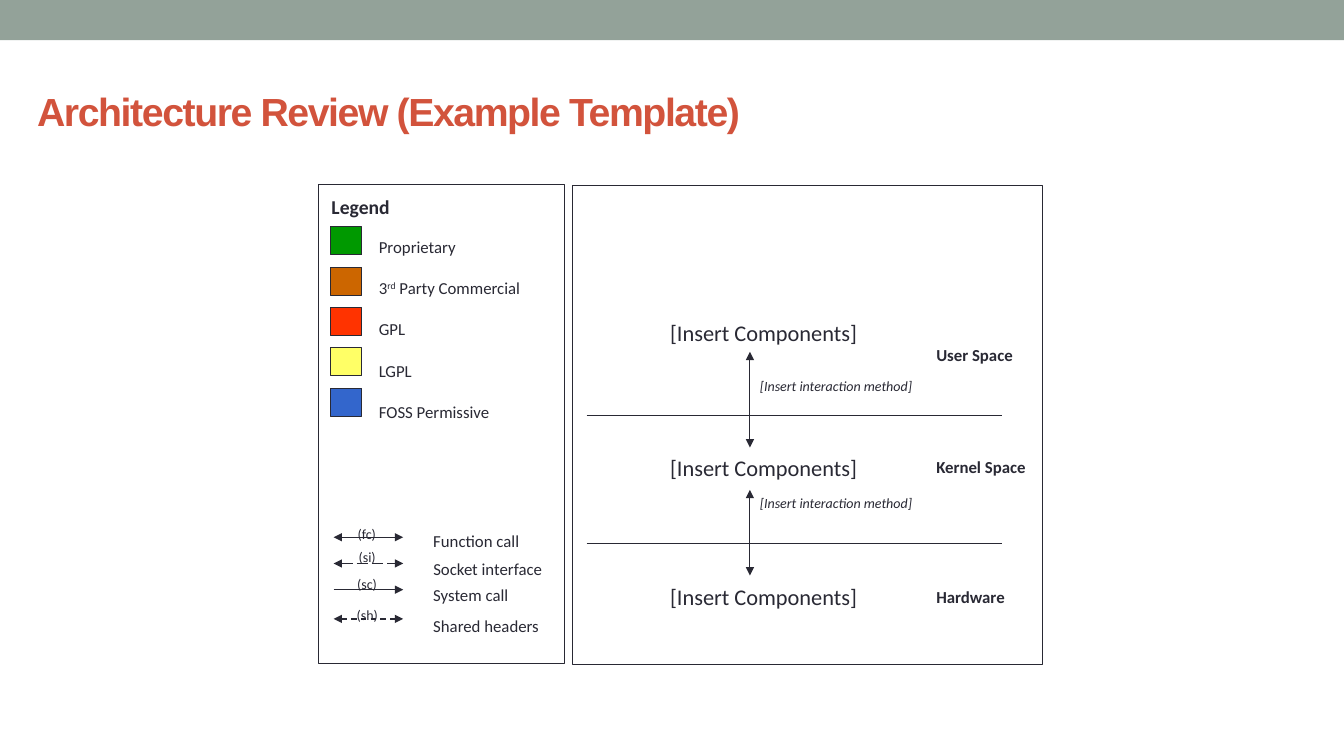
import collections

import pptx
import pptx.dml.color
import pptx.enum.dml
import pptx.enum.shapes
import pptx.enum.text
import pptx.oxml
import pptx.oxml.ns
import pptx.util

COLORS = {
    "band": "93A299",
    "title": "D2533C",
    "ink": "292934",
    "proprietary": "009900",
    "commercial": "CC6600",
    "gpl": "FF3300",
    "lgpl": "FFFF66",
    "permissive": "3366CC",
}
COLUMNS, ROWS = 160, 90
Box = collections.namedtuple("Box", "left top width height")

LICENSES = [
    ("proprietary", [("Proprietary", 0)], 11.64),
    ("commercial", [("3", 0), ("rd", 30000), (" Party Commercial", 0)], 19.44),
    ("gpl", [("GPL", 0)], 5.52),
    ("lgpl", [("LGPL", 0)], 6.36),
    ("permissive", [("FOSS Permissive", 0)], 15.72),
]
DASH = pptx.enum.dml.MSO_LINE
CALLS = [
    (42, "(fc)", 39.96, 4.68, "Function call", 40.68, 12.72, None, True),
    (45.12, "(si)", 42.72, 4.44, "Socket interface", 43.92, 15.6, DASH.LONG_DASH, True),
    (48.24, "(sc)", 45.96, 4.8, "System call", 47.04, 11.52, None, False),
    (51.72, "(sh)", 49.68, 4.92, "Shared headers", 50.76, 15.12, DASH.DASH, True),
]
LAYERS = [
    ("User Space", 18.36, 11.52, 15.36),
    ("Kernel Space", 31.68, 13.08, 31.44),
    ("Hardware", 47.16, 10.68, 46.8),
]
INTERACTIONS = [(19.8, 31.2, 22.32, 27.36), (36.24, 46.44, 36.24, 42.6)]

deck = pptx.Presentation()
deck.slide_width = pptx.util.Inches(13.33)
deck.slide_height = pptx.util.Inches(7.5)
slide = deck.slides.add_slide(deck.slide_layouts[6])


def x(columns):
    return round(deck.slide_width * columns / COLUMNS)


def y(rows):
    return round(deck.slide_height * rows / ROWS)


def place(box):
    return x(box.left), y(box.top), x(box.width), y(box.height)


def inside(region, left, top, width, height):
    return Box(region.left + left, region.top + top, width, height)


def rgb(name):
    return pptx.dml.color.RGBColor.from_string(COLORS[name])


def add_rect(box, fill=None, line_width=None):
    rect = slide.shapes.add_shape(pptx.enum.shapes.MSO_SHAPE.RECTANGLE, *place(box))
    rect.shadow.inherit = False
    if fill:
        rect.fill.solid()
        rect.fill.fore_color.rgb = rgb(fill)
    else:
        rect.fill.background()
    if line_width:
        rect.line.color.rgb = rgb("ink")
        rect.line.width = pptx.util.Pt(line_width)
    else:
        rect.line.fill.background()


def add_label(box, text, size, bold=False, italic=False):
    frame = slide.shapes.add_textbox(*place(box)).text_frame
    frame.word_wrap = False
    frame.auto_size = pptx.enum.text.MSO_AUTO_SIZE.SHAPE_TO_FIT_TEXT
    paragraph = frame.paragraphs[0]
    for words, baseline in [(text, 0)] if isinstance(text, str) else text:
        run = paragraph.add_run()
        run.text = words
        if baseline:
            run._r.get_or_add_rPr().set("baseline", str(baseline))
    font = paragraph.font
    font.name, font.size = "Calibri", pptx.util.Pt(size)
    font.bold, font.italic = bold, italic
    font.color.rgb = rgb("ink")
    return frame


def add_line(start, end, width=1, dash=None, heads=()):
    line = slide.shapes.add_connector(
        pptx.enum.shapes.MSO_CONNECTOR.STRAIGHT,
        x(start[0]), y(start[1]), x(end[0]), y(end[1]))
    line.line.color.rgb = rgb("ink")
    line.line.width = pptx.util.Pt(width)
    if dash:
        line.line.dash_style = dash
    outline = line.line._get_or_add_ln()
    for head in heads:
        tip = pptx.oxml.parse_xml(f"<a:{head} {pptx.oxml.ns.nsdecls('a')} type='triangle'/>")
        outline.append(tip)
    line._element.spPr.append(
        pptx.oxml.parse_xml(f"<a:effectLst {pptx.oxml.ns.nsdecls('a')}/>"))


def draw_header(region):
    add_rect(Box(region.left, region.top, region.width, 4.8), "band")
    title_box = inside(region, 3.24, 6.72, 144, 12.96)
    frame = add_label(title_box, "Architecture Review (Example Template)", 28, bold=True)
    frame.auto_size = pptx.enum.text.MSO_AUTO_SIZE.NONE
    frame.word_wrap = True
    frame.vertical_anchor = pptx.enum.text.MSO_ANCHOR.MIDDLE
    title = frame.paragraphs[0]
    title.font.name = "Arial"
    title.font.color.rgb = rgb("title")
    title.runs[0]._r.get_or_add_rPr().set("spc", "-100")


def draw_legend(region):
    add_rect(region, line_width=1)
    add_label(inside(region, 0.36, 0.6, 9.36, 4.08), "Legend", 14, bold=True)
    for row, (color, name, width) in enumerate(LICENSES):
        add_rect(inside(region, 1.44, 5.04 + 4.8 * row, 3.72, 3.36), color, 0.75)
        add_label(inside(region, 6, 5.64 + 4.9 * row, width, 3.6), name, 12)
    for level, mark, mark_top, mark_width, name, top, width, dash, two_way in CALLS:
        left, height = region.left + 1.8, region.top + level
        heads = ("headEnd", "tailEnd") if two_way else ("tailEnd",)
        add_line((left, height), (left + 8.28, height), dash=dash, heads=heads)
        add_label(inside(region, 5.82 - mark_width / 2, mark_top, mark_width, 3.24), mark, 10)
        add_label(inside(region, 12.48, top, width, 3.6), name, 12)


def draw_architecture(region):
    add_rect(region, line_width=1)
    for name, top, width, component_top in LAYERS:
        add_label(inside(region, 42.12, top, width, 3.6), name, 12, bold=True)
        add_label(inside(region, 10.44, component_top, 24.84, 4.44), "[Insert Components]", 16)
    axis, edge = region.left + 21.12, region.left + 1.68
    for start, end, method_top, boundary in INTERACTIONS:
        border = region.top + boundary
        add_line((edge, border), (edge + 49.44, border))
        add_line((axis, region.top + start), (axis, region.top + end), 0.75,
                 heads=("headEnd", "tailEnd"))
        add_label(inside(region, 21.12, method_top, 20.76, 3.24),
                  "[Insert interaction method]", 10, italic=True)


def main():
    draw_header(Box(0, 0, COLUMNS, 20))
    draw_legend(Box(37.92, 21.96, 29.28, 57))
    draw_architecture(Box(68.16, 22.08, 55.92, 57))
    deck.save("out.pptx")


if __name__ == "__main__":
    main()
